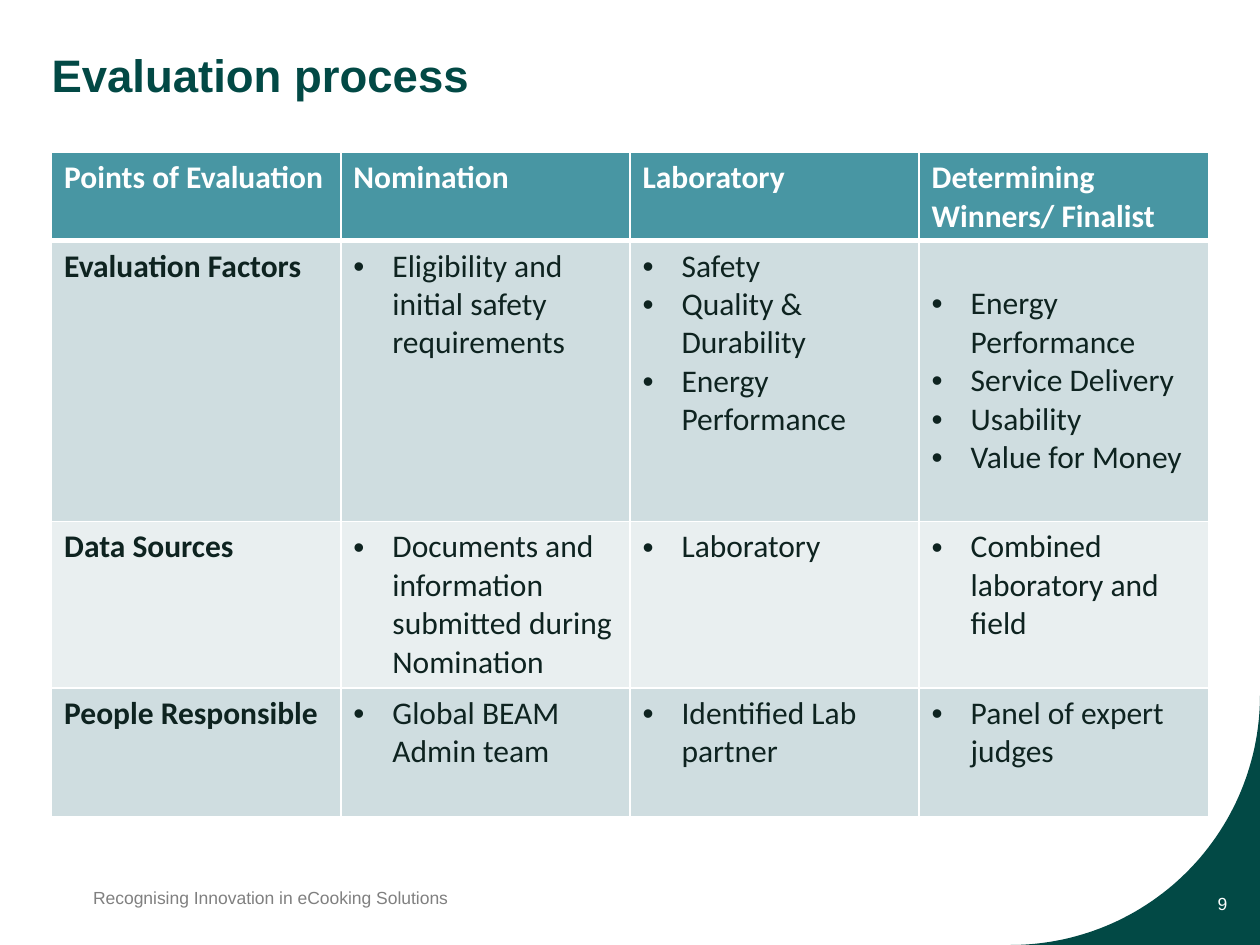
"""Build the evaluation process slide with its table, footer and corner."""
from dataclasses import dataclass
from math import cos, pi, sin

from lxml import etree
from pptx import Presentation
from pptx.dml.color import RGBColor
from pptx.enum.text import PP_ALIGN
from pptx.oxml.ns import qn
from pptx.util import Inches, Pt

LEFT, RIGHT = PP_ALIGN.LEFT, PP_ALIGN.RIGHT
INK = {"deep": "024945", "teal": "4896A3", "mist": "CFDDE0", "pale": "E9EFF0",
       "dark": "0E2320", "grey": "808080", "white": "FFFFFF"}
FORMS = {
    "title": {"name": "Arial", "size": Pt(26), "bold": True},
    "small": {"name": "Arial", "size": Pt(10), "bold": False},
    "head": {"name": "Calibri", "size": Pt(18), "bold": True},
    "body": {"name": "Calibri", "size": Pt(18), "bold": False},
}
HANG = Inches(0.31)
PAD = Inches(0.05)
GAP = Inches(0.35)


@dataclass
class Label:
    text: str
    box: tuple[float, float, float, float]
    form: str
    ink: str
    pad: tuple[float, float] = (0, 0)
    align: PP_ALIGN = LEFT
    pitch: float = 1.0


@dataclass
class Row:
    height: float
    fill: str
    name: str
    cells: tuple[tuple[str, ...], ...]
    head: bool = False


LABELS = [
    Label("Recognising Innovation in eCooking Solutions", (0.64, 7, 5.98, 0.39),
          "small", "grey", (0.1, 0.05), pitch=0.95),
    Label("9", (9.33, 7.05, 0.41, 0.26), "small", "white", (0, 0.05), RIGHT, 0.95),
    Label("Evaluation process", (0.41, 0.37, 8.43, 0.65), "title", "deep"),
]
ROWS = [
    Row(0.7, "teal", "Points of Evaluation",
        (("Nomination",), ("Laboratory",), ("Determining Winners/ Finalist",)), True),
    Row(2.23, "mist", "Evaluation Factors", (
        ("Eligibility and initial safety requirements",),
        ("Safety", "Quality & Durability", "Energy Performance"),
        ("Energy Performance", "Service Delivery", "Usability", "Value for Money"))),
    Row(1.32, "pale", "Data Sources", (
        ("Documents and information submitted during Nomination",),
        ("Laboratory",), ("Combined laboratory and field",))),
    Row(1.02, "mist", "People Responsible", (
        ("Global BEAM Admin team",), ("Identified Lab partner",),
        ("Panel of expert judges",))),
]


def write(para, text: str, form: str, ink: str) -> None:
    """Add one run of text in a named format."""
    run = para.add_run()
    run.text = text
    for key, value in FORMS[form].items():
        setattr(run.font, key, value)
    run.font.color.rgb = RGBColor.from_string(INK[ink])


def bullet(para) -> None:
    """Give a paragraph a hanging bullet."""
    props = para._p.get_or_add_pPr()
    props.set("marL", str(HANG))
    props.set("indent", str(-HANG))
    etree.SubElement(props, qn("a:buFont")).set("typeface", "Arial")
    etree.SubElement(props, qn("a:buChar")).set("char", "•")


def edge(cell, base: int) -> None:
    """Rule a cell in white, with its own weight at the base."""
    props = cell._tc.get_or_add_tcPr()
    sides = {"L": 1, "R": 1, "T": 1, "B": base}
    for spot, (side, width) in enumerate(sides.items()):
        line = etree.Element(qn(f"a:ln{side}"), w=str(Pt(width)))
        fill = etree.SubElement(line, qn("a:solidFill"))
        etree.SubElement(fill, qn("a:srgbClr")).set("val", INK["white"])
        props.insert(spot, line)


def label(slide, item: Label) -> None:
    """Draw one text box."""
    frame = slide.shapes.add_textbox(*map(Inches, item.box)).text_frame
    side, top = map(Inches, item.pad)
    form = {"word_wrap": True, "margin_left": side, "margin_right": side,
            "margin_top": top, "margin_bottom": top}
    for key, value in form.items():
        setattr(frame, key, value)
    para = frame.paragraphs[0]
    para.alignment = item.align
    para.line_spacing = item.pitch
    write(para, item.text, item.form, item.ink)


def corner(slide, size: float = 1.98, steps: int = 60) -> None:
    """Fill the lower right corner outside a quarter circle."""
    left, top = 10 - size, 7.5 - size
    turns = [pi / 2 * step / steps for step in range(steps + 1)]
    arc = [(Inches(left + size * cos(turn)), Inches(top + size * sin(turn)))
           for turn in turns]
    path = slide.shapes.build_freeform(*arc[0])
    path.add_line_segments(arc[1:] + [(Inches(10), Inches(7.5))])
    shape = path.convert_to_shape()
    shape.shadow.inherit = False
    shape.fill.solid()
    shape.fill.fore_color.rgb = RGBColor.from_string(INK["deep"])
    shape.line.fill.background()


def fill_cell(cell, row: Row, texts: tuple[str, ...], first: bool) -> None:
    """Fill, rule and write one table cell."""
    cell.fill.solid()
    cell.fill.fore_color.rgb = RGBColor.from_string(INK[row.fill])
    edge(cell, 3 if row.head else 1)
    cell.margin_top = GAP if len(texts) > 3 else PAD
    frame = cell.text_frame
    for spot, text in enumerate(texts):
        para = frame.add_paragraph() if spot else frame.paragraphs[0]
        plain = row.head or first
        if not plain:
            bullet(para)
        write(para, text, "head" if plain else "body", "white" if row.head else "dark")


def grid(slide, rows: list[Row]) -> None:
    """Draw the evaluation table."""
    count = len(rows[0].cells) + 1
    high = sum(row.height for row in rows)
    table = slide.shapes.add_table(len(rows), count, Inches(0.41), Inches(1.21),
                                   Inches(9.18), Inches(high)).table
    for down, row in enumerate(rows):
        table.rows[down].height = Inches(row.height)
        for across, texts in enumerate(((row.name,), *row.cells)):
            fill_cell(table.cell(down, across), row, texts, across == 0)


def main() -> None:
    """Build and save the slide."""
    deck = Presentation()
    deck.slide_width, deck.slide_height = Inches(10), Inches(7.5)
    slide = deck.slides.add_slide(deck.slide_layouts[6])
    corner(slide)
    for item in LABELS:
        label(slide, item)
    grid(slide, ROWS)
    deck.save("out.pptx")


if __name__ == "__main__":
    main()
